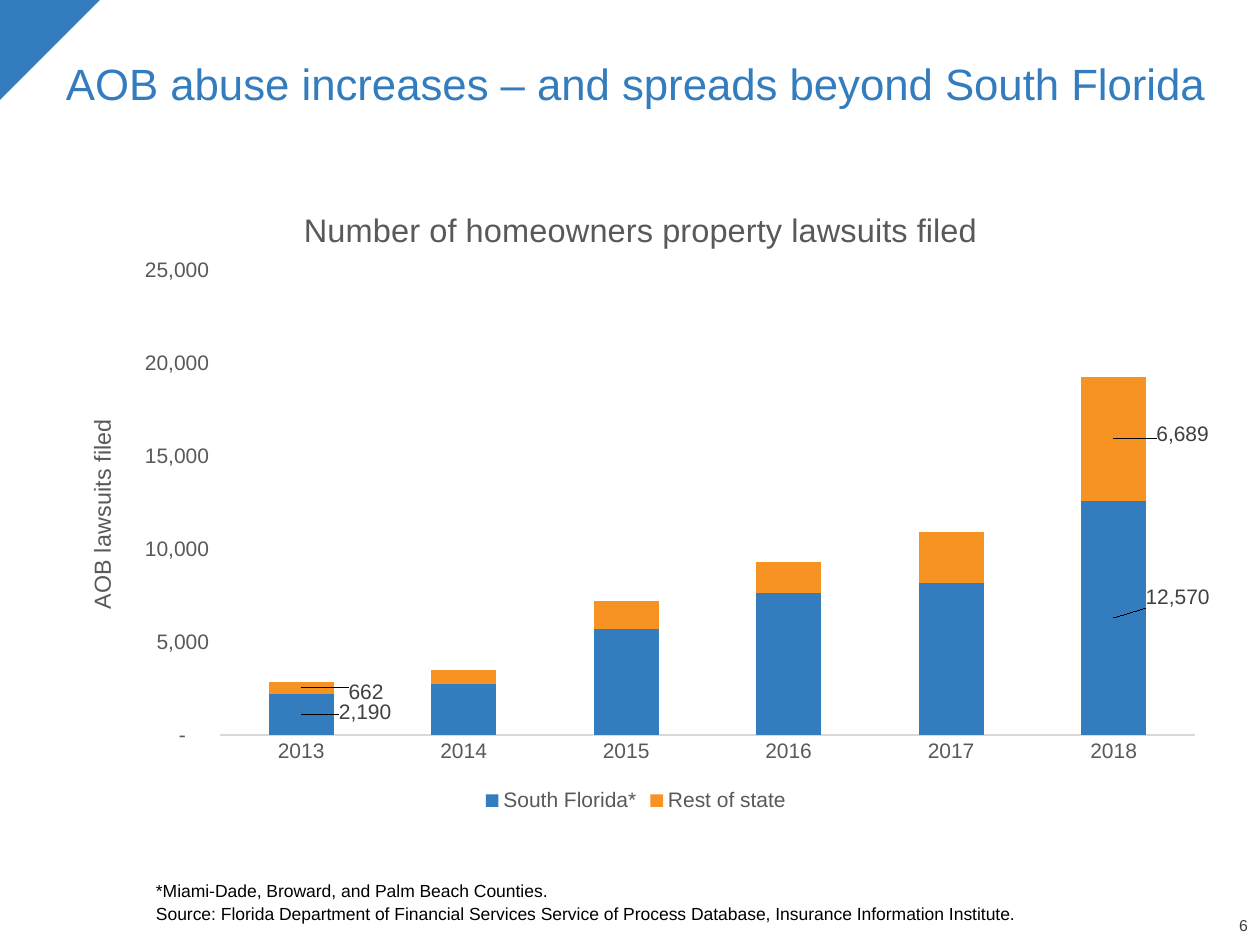
from dataclasses import dataclass

from lxml.etree import SubElement
from pptx import Presentation
from pptx.chart.chart import Chart
from pptx.chart.data import CategoryChartData
from pptx.dml.color import RGBColor
from pptx.enum.chart import XL_CHART_TYPE as ChartType
from pptx.enum.chart import XL_LEGEND_POSITION as LegendPosition
from pptx.enum.chart import XL_TICK_MARK as TickMark
from pptx.enum.shapes import MSO_SHAPE as Preset
from pptx.enum.text import MSO_ANCHOR as Anchor
from pptx.enum.text import MSO_AUTO_SIZE as AutoSize
from pptx.enum.text import PP_ALIGN as Align
from pptx.oxml import parse_xml
from pptx.oxml.ns import nsdecls, qn
from pptx.util import Pt

EMU_PER_PX = 914400 / 126
FONT = "Arial"
BLUE, ORANGE = "337DBE", "F69322"
BLACK, DARK, GREY, PALE = "000000", "404040", "595959", "D9D9D9"
ACCOUNTING = r'_(* #,##0_);_(* \(#,##0\);_(* "-"??_);_(@_)'
LEADER_LINES = (
    f'<c:extLst {nsdecls("c")}><c:ext uri="{{CE6537A1-D6FC-4f65-9D91-7224C49458BB}}" '
    'xmlns:c15="http://schemas.microsoft.com/office/drawing/2012/chart">'
    '<c15:showLeaderLines val="1"/></c:ext></c:extLst>'
)


@dataclass(frozen=True)
class Box:
    """A rectangle in px."""
    left: int
    top: int
    width: int
    height: int

    def emu(self) -> tuple:
        """Return the four lengths in EMU."""
        return tuple(px(n) for n in (self.left, self.top, self.width, self.height))


@dataclass(frozen=True)
class Region:
    """One stacked series and the px shift of its labels, keyed by year index."""
    name: str
    lawsuits: tuple
    color: str
    label_shifts: dict


CHART_BOX = Box(53, 178, 1166, 639)
PLOT_BOX = Box(220, 270, 975, 465)
YEARS = [str(year) for year in range(2013, 2019)]
REGIONS = [
    Region("South Florida*", (2190, 2736, 5709, 7615, 8166, 12570), BLUE,
           {0: (64, -2), 5: (64, -21)}),
    Region("Rest of state", (662, 754, 1502, 1652, 2747, 6689), ORANGE,
           {0: (65, 4), 5: (69, -5)}),
]
FOOTNOTES = [
    "*Miami-Dade, Broward, and Palm Beach Counties.",
    "Source: Florida Department of Financial Services Service of Process Database, "
    "Insurance Information Institute.",
]


def px(length: int) -> int:
    """Turn px into EMU."""
    return round(length * EMU_PER_PX)


def rgb(color: str) -> RGBColor:
    """Turn a hex string into a colour."""
    return RGBColor.from_string(color)


def style_font(font, size: float, color: str) -> None:
    """Set typeface, size and colour."""
    font.name, font.size, font.bold = FONT, Pt(size), False
    font.color.rgb = rgb(color)


def write(frame, lines: list, size: float, color: str, anchor, align=Align.LEFT,
          margins: tuple = (0, 0, 0, 0)) -> None:
    """Fill a text frame with evenly styled paragraphs."""
    frame.text = "\n".join(lines)
    frame.word_wrap, frame.auto_size = True, AutoSize.NONE
    frame.vertical_anchor = anchor
    (frame.margin_left, frame.margin_top,
     frame.margin_right, frame.margin_bottom) = map(px, margins)
    for index, paragraph in enumerate(frame.paragraphs):
        paragraph.alignment, paragraph.line_spacing = align, 0.9
        paragraph.space_before = Pt(2 if index else 0)
        for run in paragraph.runs:
            style_font(run.font, size, color)


def make_layout(**parts):
    """Build a manual layout element from its ordered parts."""
    layout = parse_xml(f'<c:layout {nsdecls("c")}/>')
    manual = SubElement(layout, qn("c:manualLayout"))
    for tag, value in parts.items():
        text = value if isinstance(value, str) else f"{value:.4f}"
        SubElement(manual, qn(f"c:{tag}")).set("val", text)
    return layout


def place_plot(chart: Chart) -> None:
    """Fix the inner plot area within the chart."""
    plot_area = chart._chartSpace.chart.plotArea
    for layout in plot_area.findall(qn("c:layout")):
        plot_area.remove(layout)
    plot_area.insert(0, make_layout(
        layoutTarget="inner", xMode="edge", yMode="edge",
        x=(PLOT_BOX.left - CHART_BOX.left) / CHART_BOX.width,
        y=(PLOT_BOX.top - CHART_BOX.top) / CHART_BOX.height,
        w=PLOT_BOX.width / CHART_BOX.width, h=PLOT_BOX.height / CHART_BOX.height))


def write_caption(caption, wording: str, size: float, left: int, top: int) -> None:
    """Write a chart or axis title and place its corner."""
    caption.text_frame.text = wording
    style_font(caption.text_frame.paragraphs[0].runs[0].font, size, GREY)
    element = caption._element
    for layout in element.findall(qn("c:layout")):
        element.remove(layout)
    element.find(qn("c:tx")).addnext(make_layout(
        xMode="edge", yMode="edge",
        x=(left - CHART_BOX.left) / CHART_BOX.width,
        y=(top - CHART_BOX.top) / CHART_BOX.height))


def style_region(series, region: Region) -> None:
    """Colour a series and label its chosen years with leader lines."""
    series.format.fill.solid()
    series.format.fill.fore_color.rgb = rgb(region.color)
    labels = series.data_labels
    labels.show_value = False
    labels.number_format, labels.number_format_is_linked = "#,##0", False
    for index, (right, down) in region.label_shifts.items():
        label = series.points[index].data_label
        style_font(label.font, 12, DARK)
        element = label._dLbl
        element.find(qn("c:idx")).addnext(make_layout(
            x=right / CHART_BOX.width, y=down / CHART_BOX.height))
        number_format = parse_xml(
            f'<c:numFmt {nsdecls("c")} formatCode="#,##0" sourceLinked="0"/>')
        element.find(qn("c:layout")).addnext(number_format)
    labels._element.append(parse_xml(LEADER_LINES))


def style_axes(chart: Chart) -> None:
    """Format both axes."""
    years, lawsuits = chart.category_axis, chart.value_axis
    for axis in (years, lawsuits):
        axis.major_tick_mark = axis.minor_tick_mark = TickMark.NONE
        axis.has_major_gridlines = False
        style_font(axis.tick_labels.font, 12, GREY)
    years.format.line.color.rgb = rgb(PALE)
    years.format.line.width = Pt(0.75)
    lawsuits.format.line.fill.background()
    lawsuits.minimum_scale, lawsuits.maximum_scale = 0, 25000
    lawsuits.major_unit = 5000
    lawsuits.tick_labels.number_format = ACCOUNTING
    lawsuits.tick_labels.number_format_is_linked = False
    write_caption(lawsuits.axis_title, "AOB lawsuits filed", 13.3, 83, 415)


def add_lawsuit_chart(slide) -> None:
    """Add the stacked columns of lawsuits by year."""
    data = CategoryChartData(number_format=ACCOUNTING)
    data.categories = YEARS
    for region in REGIONS:
        data.add_series(region.name, region.lawsuits)
    chart = slide.shapes.add_chart(
        ChartType.COLUMN_STACKED, *CHART_BOX.emu(), data).chart
    style_font(chart.font, 10, BLACK)
    write_caption(chart.chart_title, "Number of homeowners property lawsuits filed",
                  18.62, 298, 203)
    chart.has_legend = True
    chart.legend.position = LegendPosition.BOTTOM
    chart.legend.include_in_layout = False
    style_font(chart.legend.font, 12, GREY)
    columns = chart.plots[0]
    columns.gap_width, columns.overlap, columns.vary_by_categories = 150, 100, False
    for series, region in zip(columns.series, REGIONS):
        style_region(series, region)
    style_axes(chart)
    place_plot(chart)


def main() -> None:
    """Build the slide and save it."""
    deck = Presentation()
    deck.slide_width, deck.slide_height = px(1260), px(945)
    slide = deck.slides.add_slide(deck.slide_layouts[5])

    corner = slide.shapes.add_shape(Preset.RIGHT_TRIANGLE, *Box(-1, 0, 101, 101).emu())
    corner.rotation = 90
    corner.shadow.inherit = False
    corner.fill.solid()
    corner.fill.fore_color.rgb = rgb(BLUE)
    corner.line.fill.background()

    headline = slide.shapes.title
    headline.left, headline.top, headline.width, headline.height = Box(
        53, 57, 1166, 131).emu()
    write(headline.text_frame, ["AOB abuse increases – and spreads beyond South Florida"],
          25, BLUE, Anchor.TOP, margins=(13, 6, 0, 6))

    add_lawsuit_chart(slide)

    footnote = slide.shapes.add_textbox(*Box(156, 867, 1058, 57).emu())
    write(footnote.text_frame, FOOTNOTES, 10, BLACK, Anchor.BOTTOM)
    page_number = slide.shapes.add_textbox(*Box(1188, 918, 60, 17).emu())
    write(page_number.text_frame, ["6"], 9, DARK, Anchor.BOTTOM, Align.RIGHT)

    deck.save("out.pptx")


if __name__ == "__main__":
    main()
